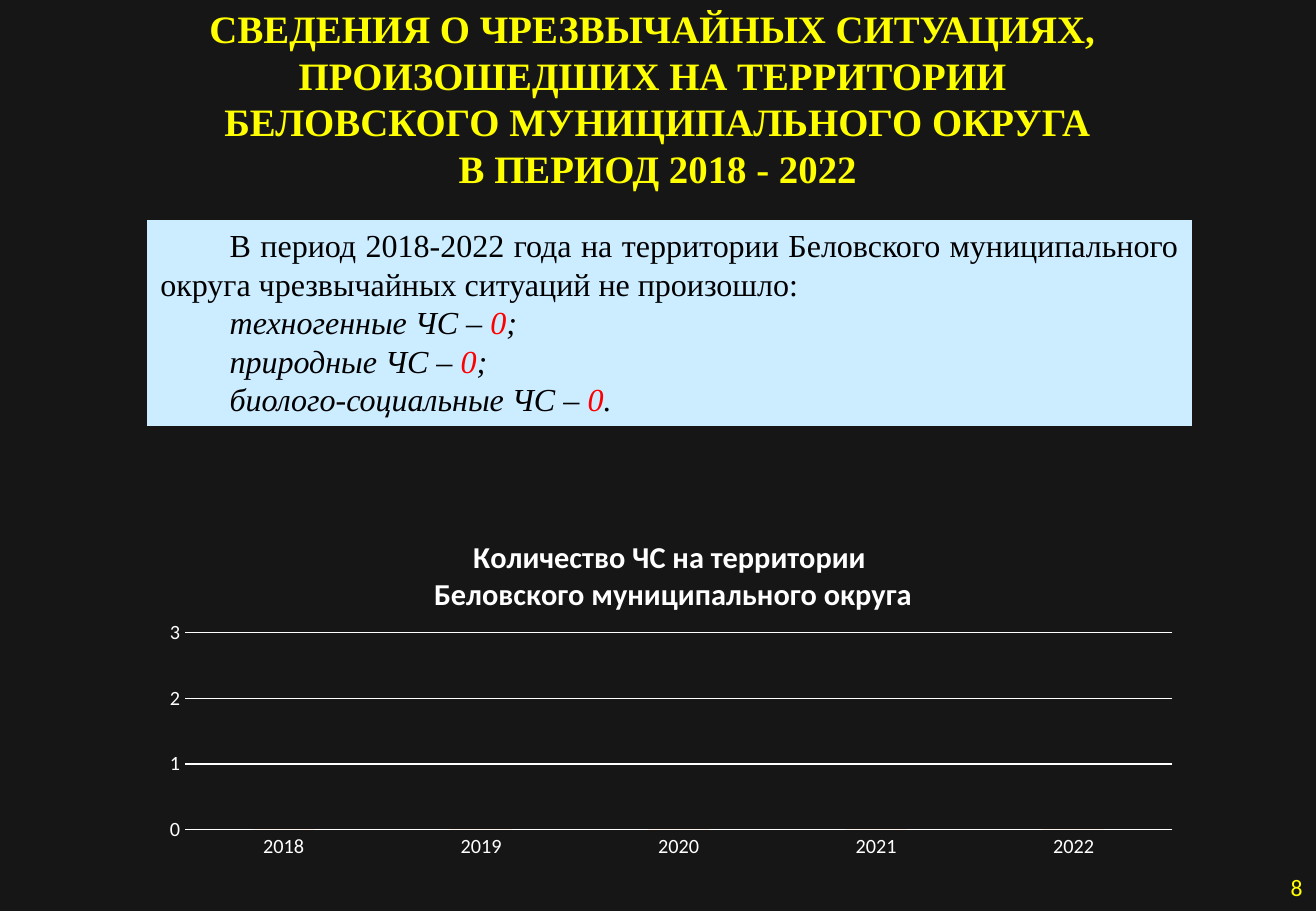
from lxml.etree import SubElement
from pptx import Presentation
from pptx.chart.data import CategoryChartData
from pptx.dml.color import RGBColor
from pptx.enum.chart import XL_CHART_TYPE, XL_TICK_MARK
from pptx.enum.shapes import MSO_SHAPE
from pptx.enum.text import MSO_ANCHOR, MSO_AUTO_SIZE, PP_ALIGN
from pptx.oxml.ns import qn
from pptx.util import Inches, Pt

DARK = RGBColor(0x17, 0x16, 0x16)
YELLOW = RGBColor(0xFF, 0xFF, 0x00)
PALE = RGBColor(0xCC, 0xEC, 0xFF)
BLACK = RGBColor(0x00, 0x00, 0x00)
RED = RGBColor(0xFF, 0x00, 0x00)
WHITE = RGBColor(0xFF, 0xFF, 0xFF)
ORANGE = RGBColor(0xF2, 0x90, 0x54)
SERIF, SANS = "Times New Roman", "Calibri"


def style(font, name, size, color, bold=False):
    font.name, font.size, font.bold = name, Pt(size), bold
    font.color.rgb = color


def place(layout, **values):
    for old in list(layout):
        layout.remove(old)
    manual = SubElement(layout, qn("c:manualLayout"))
    for tag, value in values.items():
        SubElement(manual, qn("c:" + tag)).set("val", str(value))


deck = Presentation()
deck.slide_width, deck.slide_height = Inches(10.83), Inches(7.5)
slide = deck.slides.add_slide(deck.slide_layouts[6])
slide.background.fill.solid()
slide.background.fill.fore_color.rgb = DARK

# Heading and page number
head = ["СВЕДЕНИЯ О ЧРЕЗВЫЧАЙНЫХ СИТУАЦИЯХ, ",
        "ПРОИЗОШЕДШИХ НА ТЕРРИТОРИИ ",
        "БЕЛОВСКОГО МУНИЦИПАЛЬНОГО ОКРУГА",
        "В ПЕРИОД 2018 - 2022"]
labels = [
    ((0, 0.05, 10.83, 1.51), head, PP_ALIGN.CENTER, SERIF, 23, True),
    ((8.31, 7.1, 2.53, 0.4), ["8"], PP_ALIGN.RIGHT, SANS, 14, False),
]
frames = []
for spot, lines, align, name, size, bold in labels:
    frame = slide.shapes.add_textbox(*map(Inches, spot)).text_frame
    frame.vertical_anchor = MSO_ANCHOR.MIDDLE
    frame.text = "\n".join(lines)
    for para in frame.paragraphs:
        para.alignment = align
        style(para.font, name, size, YELLOW, bold)
    frames.append(frame)

# Summary panel
panel = slide.shapes.add_shape(MSO_SHAPE.RECTANGLE, Inches(1.2), Inches(1.8),
                               Inches(8.62), Inches(1.72))
panel.shadow.inherit = False
panel.fill.solid()
panel.fill.fore_color.rgb = PALE
panel.line.color.rgb = DARK
panel.line.width = Pt(1.5)
frame = panel.text_frame
frame.vertical_anchor = MSO_ANCHOR.TOP
frame.auto_size = MSO_AUTO_SIZE.SHAPE_TO_FIT_TEXT
frames.append(frame)

frame.text = ("В период 2018-2022 года на территории Беловского муниципального "
              "округа чрезвычайных ситуаций не произошло: ")
for kind, end in [("техногенные", "; "), ("природные", "; "),
                  ("биолого-социальные", ". ")]:
    para = frame.add_paragraph()
    para.font.italic = True
    for text, color in [(f"{kind} ЧС – ", BLACK), ("0", RED), (end, BLACK)]:
        run = para.add_run()
        run.text = text
        run.font.color.rgb = color
for para in frame.paragraphs:
    para.alignment = PP_ALIGN.JUSTIFY
    style(para.font, SERIF, 19, BLACK)
    props = para._p.get_or_add_pPr()
    props.set("marL", "0")
    props.set("indent", str(Inches(0.57)))

# Shared text margins
for frame in frames:
    frame.word_wrap = True
    frame.margin_left = frame.margin_right = Inches(0.12)
    frame.margin_top = frame.margin_bottom = Inches(0.06)

# Chart of emergencies by year
data = CategoryChartData()
data.categories = [str(year) for year in range(2018, 2023)]
data.add_series("Series 1", [0] * 5)
chart = slide.shapes.add_chart(XL_CHART_TYPE.COLUMN_CLUSTERED, Inches(1.22),
                               Inches(4.22), Inches(8.6), Inches(2.91), data).chart
style(chart.font, SANS, 10, WHITE)
chart.has_legend = False
plot = chart.plots[0]
plot.gap_width, plot.overlap = 219, -27
plot.vary_by_categories = False
fill = plot.series[0].format.fill
fill.solid()
fill.fore_color.rgb = ORANGE

# Axes
years, count = chart.category_axis, chart.value_axis
for axis in (years, count):
    axis.major_tick_mark = axis.minor_tick_mark = XL_TICK_MARK.NONE
    style(axis.tick_labels.font, SANS, 12, WHITE)
count.minimum_scale, count.maximum_scale, count.major_unit = 0, 3, 1
count.format.line.fill.background()
for line in (years.format.line, count.major_gridlines.format.line):
    line.color.rgb = WHITE
    line.width = Pt(0.75)

# Chart title and inner layout
chart.has_title = True
title = chart.chart_title
title.include_in_layout = False
title.text_frame.text = "Количество ЧС на территории \nБеловского муниципального округа"
for para in title.text_frame.paragraphs:
    para.alignment = PP_ALIGN.CENTER
    style(para.font, SANS, 18, WHITE, True)
area = chart._chartSpace.chart.plotArea
for parent, index in ((title._element, 1), (area, 0)):
    if parent.find(qn("c:layout")) is None:
        parent.insert(index, SubElement(parent, qn("c:layout")))
place(title._element.find(qn("c:layout")), xMode="edge", yMode="edge", x=0.27, y=0.06)
place(area.find(qn("c:layout")), layoutTarget="inner", xMode="edge", yMode="edge",
      x=0.035, y=0.34, w=0.945, h=0.557)

deck.save("out.pptx")
